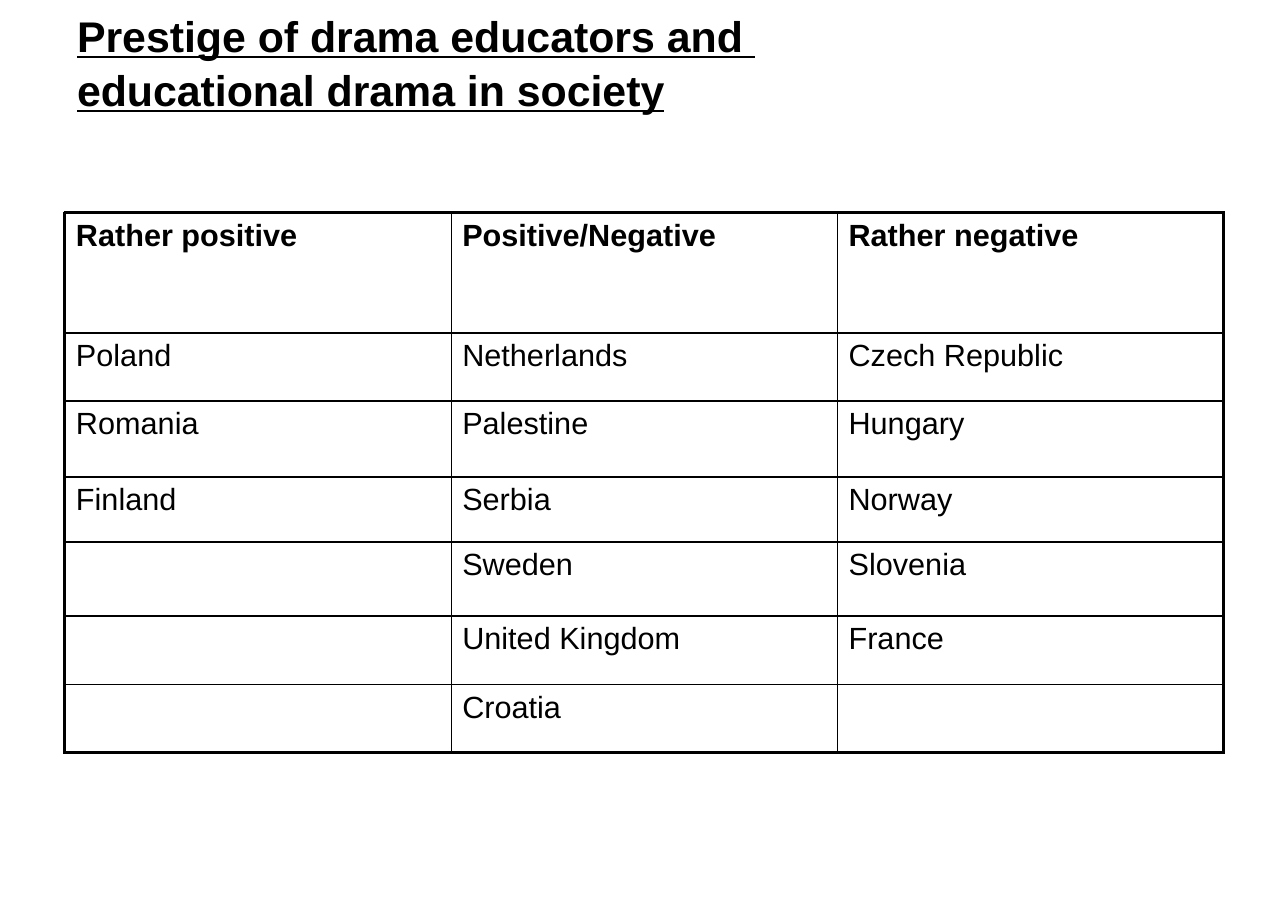
from dataclasses import dataclass

from lxml import etree
from pptx import Presentation
from pptx.dml.color import RGBColor
from pptx.enum.text import MSO_ANCHOR, MSO_AUTO_SIZE, PP_ALIGN
from pptx.oxml.ns import qn
from pptx.util import Emu, Pt

LEFT = PP_ALIGN.LEFT
MIDDLE = MSO_ANCHOR.MIDDLE
TOP = MSO_ANCHOR.TOP
NO_FIT = MSO_AUTO_SIZE.NONE

HEADING = "Prestige of drama educators and \veducational drama in society"
COUNTRIES_BY_PRESTIGE = {
    "Rather positive": ["Poland", "Romania", "Finland"],
    "Positive/Negative": ["Netherlands", "Palestine", "Serbia", "Sweden",
                          "United Kingdom", "Croatia"],
    "Rather negative": ["Czech Republic", "Hungary", "Norway", "Slovenia",
                        "France"],
}

EMU_PER_PX = 914400 / 110.2
SLIDE_SIZE = (1288, 911)
HEADING_BOX = (65, 52, 1159, 18)
GRID_LEFT, GRID_TOP, GRID_WIDTH = 65, 213, 1159
ROW_HEIGHTS = [120, 68, 76, 65, 74, 69, 68]
HEADING_INSETS = (12, 6, 12, 6)
CELL_INSETS = (11, 6, 11, 6)


@dataclass(frozen=True)
class Theme:
    font: str = "Arial"
    ink: str = "000000"
    heading_size: int = 28
    cell_size: int = 20
    outer_line: float = 2.25
    inner_line: float = 1


THEME = Theme()


def px(length):
    return Emu(round(length * EMU_PER_PX))


def write(frame, text, *, size, bold=False, underline=False, spacing=None):
    paragraph = frame.paragraphs[0]
    paragraph.text = text
    paragraph.alignment = LEFT
    paragraph.line_spacing = spacing
    for font in [paragraph.font] + [run.font for run in paragraph.runs]:
        font.name = THEME.font
        font.size = Pt(size)
        font.bold = bold
        font.underline = underline
        font.color.rgb = RGBColor.from_string(THEME.ink)


def set_insets(holder, insets):
    (holder.margin_left, holder.margin_top,
     holder.margin_right, holder.margin_bottom) = map(px, insets)


def draw_borders(cell, outer_sides):
    properties = cell._tc.get_or_add_tcPr()
    for side, is_outer in outer_sides.items():
        width = THEME.outer_line if is_outer else THEME.inner_line
        line = etree.SubElement(properties, qn(f"a:ln{side}"), w=str(Pt(width)))
        fill = etree.SubElement(line, qn("a:solidFill"))
        etree.SubElement(fill, qn("a:srgbClr"), val=THEME.ink)


def add_heading(slide):
    heading = slide.shapes.title
    heading.left, heading.top, heading.width, heading.height = map(px, HEADING_BOX)
    frame = heading.text_frame
    frame.word_wrap = True
    frame.auto_size = NO_FIT
    frame.vertical_anchor = MIDDLE
    set_insets(frame, HEADING_INSETS)
    write(frame, HEADING, size=THEME.heading_size, bold=True, underline=True,
          spacing=1.05)


def add_prestige_grid(slide):
    row_count, column_count = len(ROW_HEIGHTS), len(COUNTRIES_BY_PRESTIGE)
    grid = slide.shapes.add_table(
        row_count, column_count, px(GRID_LEFT), px(GRID_TOP),
        px(GRID_WIDTH), px(sum(ROW_HEIGHTS))).table
    grid.first_row = False
    grid.horz_banding = False
    for row, height in zip(grid.rows, ROW_HEIGHTS):
        row.height = px(height)
    for c, (prestige, countries) in enumerate(COUNTRIES_BY_PRESTIGE.items()):
        grid.columns[c].width = px(GRID_WIDTH / column_count)
        entries = [prestige, *countries]
        for r in range(row_count):
            cell = grid.cell(r, c)
            set_insets(cell, CELL_INSETS)
            cell.vertical_anchor = TOP
            draw_borders(cell, {"L": c == 0, "R": c == column_count - 1,
                                "T": r == 0, "B": r == row_count - 1})
            cell.fill.background()
            if r < len(entries):
                write(cell.text_frame, entries[r], size=THEME.cell_size,
                      bold=r == 0)


def main():
    deck = Presentation()
    deck.slide_width, deck.slide_height = map(px, SLIDE_SIZE)
    slide = deck.slides.add_slide(deck.slide_layouts.get_by_name("Title Only"))
    add_heading(slide)
    add_prestige_grid(slide)
    deck.save("out.pptx")


if __name__ == "__main__":
    main()
